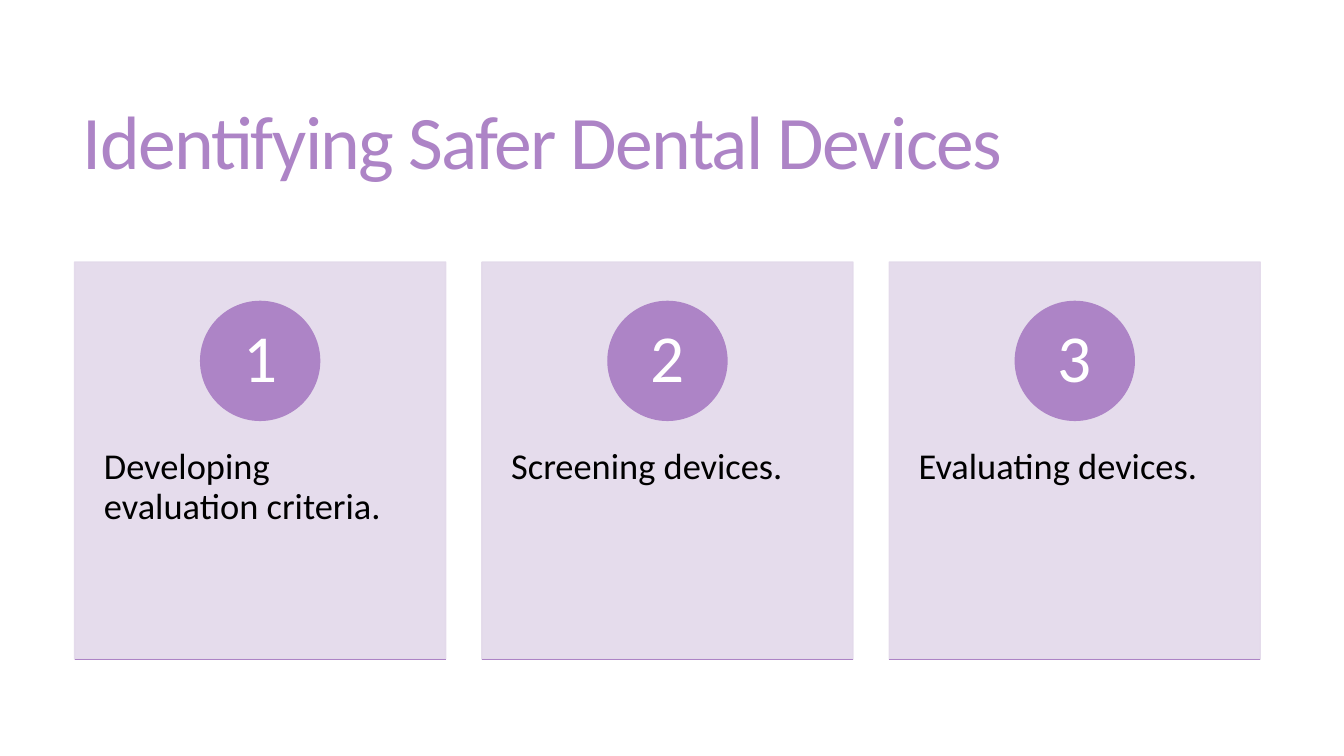
from dataclasses import dataclass

import pptx
import pptx.dml.color
import pptx.enum.shapes
import pptx.enum.text
import pptx.oxml.ns
import pptx.util
from lxml import etree

Inches = pptx.util.Inches
Kinds = pptx.enum.shapes.MSO_SHAPE
Anchor = pptx.enum.text.MSO_ANCHOR
Align = pptx.enum.text.PP_ALIGN
qn = pptx.oxml.ns.qn


@dataclass(frozen=True)
class Theme:
    font: str = "Calibri"
    accent: str = "AD84C6"
    panel: str = "E3D9EA"
    ink: str = "000000"
    paper: str = "FFFFFF"
    title: int = 54
    number: int = 48
    body: int = 26


THEME = Theme()
STEPS = ["Developing evaluation criteria.", "Screening devices.", "Evaluating devices."]
LEFT, TOP, WIDTH, HEIGHT = 0.74, 2.6, 3.68, 3.94
PITCH = 4.04
DISC = 1.18


def color(code):
    return pptx.dml.color.RGBColor.from_string(code)


def write(shape, text, size, code, align, anchor, space, inset):
    frame = shape.text_frame
    frame.word_wrap = True
    frame.auto_size = pptx.enum.text.MSO_AUTO_SIZE.NONE
    frame.vertical_anchor = anchor
    frame.margin_left = frame.margin_right = Inches(inset[0])
    frame.margin_top = frame.margin_bottom = Inches(inset[1])
    frame.text = text
    line = frame.paragraphs[0]
    line.alignment = align
    line.line_spacing = space
    line.font.name = THEME.font
    line.font.size = pptx.util.Pt(size)
    line.font.color.rgb = color(code)
    return line


def add_title(slide, text):
    title = slide.shapes.title
    title.left, title.top = Inches(0.72), Inches(0.55)
    title.width, title.height = Inches(11.78), Inches(1.81)
    line = write(title, text, THEME.title, THEME.accent, Align.LEFT,
                 Anchor.MIDDLE, 0.85, (0.1, 0.05))
    line.runs[0].font._element.set("spc", "-120")


def add_block(slide, kind, left, top, width, height, code):
    block = slide.shapes.add_shape(
        kind, Inches(left), Inches(top), Inches(width), Inches(height))
    block.shadow.inherit = False
    block.fill.solid()
    block.fill.fore_color.rgb = color(code)
    block.line.color.rgb = color(code)
    block.line.width = pptx.util.Pt(1)
    return block


def fade(shape, percent):
    for tint in shape._element.spPr.iter(qn("a:srgbClr")):
        etree.SubElement(tint, qn("a:alpha")).set("val", str(percent * 1000))


def add_rule(slide, left, top, width):
    rule = slide.shapes.add_connector(
        pptx.enum.shapes.MSO_CONNECTOR.STRAIGHT,
        Inches(left), Inches(top), Inches(left + width), Inches(top))
    rule.line.color.rgb = color(THEME.accent)
    rule.line.width = pptx.util.Pt(1)
    etree.SubElement(rule._element.spPr, qn("a:effectLst"))


def add_card(slide, left, number, text):
    panel = add_block(slide, Kinds.RECTANGLE, left, TOP, WIDTH, HEIGHT, THEME.panel)
    fade(panel, 90)
    label = slide.shapes.add_textbox(
        Inches(left), Inches(4.09), Inches(WIDTH), Inches(2.36))
    write(label, text, THEME.body, THEME.ink, Align.LEFT,
          Anchor.TOP, 0.9, (0.29, 0.36))
    disc = add_block(slide, Kinds.OVAL, left + (WIDTH - DISC) / 2, 2.99,
                     DISC, DISC, THEME.accent)
    write(disc, str(number), THEME.number, THEME.paper, Align.CENTER,
          Anchor.MIDDLE, 0.9, (0, 0))
    add_rule(slide, left, TOP + HEIGHT, WIDTH)


def main():
    deck = pptx.Presentation()
    deck.slide_width, deck.slide_height = Inches(13.33), Inches(7.5)
    slide = deck.slides.add_slide(deck.slide_layouts[5])
    add_title(slide, "Identifying Safer Dental Devices")
    for index, text in enumerate(STEPS):
        add_card(slide, LEFT + index * PITCH, index + 1, text)
    deck.save("out.pptx")


if __name__ == "__main__":
    main()
